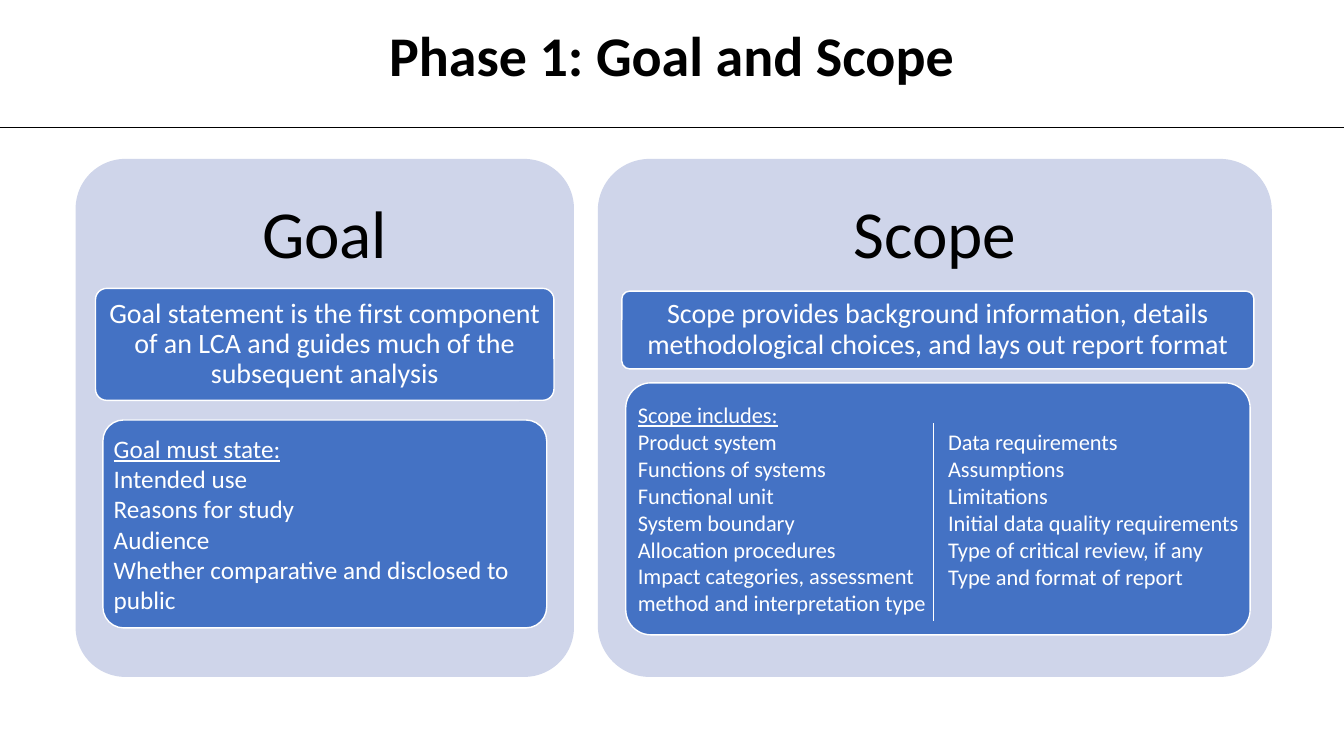
from lxml import etree
from pptx import Presentation
from pptx.dml.color import RGBColor
from pptx.enum import shapes, text
from pptx.oxml import ns
from pptx.util import Pt

BLACK, WHITE, PALE, BLUE = "000000", "FFFFFF", "CFD5EA", "4472C4"
CENTER, LEFT = text.PP_ALIGN.CENTER, text.PP_ALIGN.LEFT
MIDDLE, TOP = text.MSO_ANCHOR.MIDDLE, text.MSO_ANCHOR.TOP


def rgb(value):
    return RGBColor.from_string(value)


class SlideBuilder:
    """Holds the shared style and the slide being filled."""

    font = "Calibri"
    corner = 0.1

    def __init__(self, slide):
        self.slide = slide

    def set_lines(self, shape, lines, size, color, align=LEFT, anchor=MIDDLE,
                  spacing=1.0, insets=(7.2, 3.6, 7.2, 3.6), bold=False, heading=False):
        """Fill a shape with one paragraph per line; heading underlines the first."""
        frame = shape.text_frame
        frame.text = "\n".join(lines)
        frame.word_wrap = True
        frame.auto_size = text.MSO_AUTO_SIZE.NONE
        frame.vertical_anchor = anchor
        (frame.margin_left, frame.margin_top,
         frame.margin_right, frame.margin_bottom) = map(Pt, insets)
        for index, paragraph in enumerate(frame.paragraphs):
            paragraph.alignment = align
            paragraph.line_spacing = spacing
            paragraph.space_before = paragraph.space_after = Pt(0)
            for run in paragraph.runs:
                run.font.name = self.font
                run.font.size = Pt(size)
                run.font.bold = bold
                run.font.underline = heading and index == 0
                run.font.color.rgb = rgb(color)

    def place(self, shape, box):
        shape.left, shape.top, shape.width, shape.height = map(Pt, box)

    def title(self, box, wording):
        heading = self.slide.shapes.title
        self.place(heading, box)
        self.set_lines(heading, [wording], 40, BLACK, CENTER, spacing=0.9, bold=True)

    def body(self, box, lines, size):
        """Place the body placeholder in front, as a list without bullets."""
        column = self.slide.placeholders[1]
        self.place(column, box)
        self.set_lines(column, lines, size, WHITE, anchor=TOP)
        for paragraph in column.text_frame.paragraphs:
            properties = paragraph._p.get_or_add_pPr()
            properties.set("marL", "0")
            properties.set("indent", "0")
            etree.SubElement(properties, ns.qn("a:buNone"))
        column.element.getparent().append(column.element)

    def card(self, box, fill, outline=None):
        card = self.slide.shapes.add_shape(
            shapes.MSO_SHAPE.ROUNDED_RECTANGLE, *map(Pt, box))
        card.adjustments[0] = self.corner
        card.shadow.inherit = False
        card.fill.solid()
        card.fill.fore_color.rgb = rgb(fill)
        if outline:
            card.line.color.rgb = rgb(outline)
            card.line.width = Pt(1)
        else:
            card.line.fill.background()
        return card

    def panel(self, box, heading):
        """Pale card with its heading held in the top band."""
        self.set_lines(self.card(box, PALE), [heading], 48, BLACK, CENTER,
                       spacing=0.9, insets=(14.4, 0, 14.4, 259))

    def statement(self, box, wording):
        self.set_lines(self.card(box, BLUE, WHITE), [wording], 20, WHITE, CENTER,
                       spacing=0.9, insets=(4, 3, 4, 3))

    def checklist(self, box, lines, size):
        self.set_lines(self.card(box, BLUE, WHITE), lines, size, WHITE,
                       insets=(3.4, 2.5, 3.4, 2.5), heading=True)

    def rule(self, x1, y1, x2, y2, color):
        line = self.slide.shapes.add_connector(
            shapes.MSO_CONNECTOR.STRAIGHT, Pt(x1), Pt(y1), Pt(x2), Pt(y2))
        line.line.color.rgb = rgb(color)
        line.line.width = Pt(0.5)
        etree.SubElement(line.element.spPr, ns.qn("a:effectLst"))


def main():
    deck = Presentation()
    deck.slide_width, deck.slide_height = Pt(960), Pt(540)
    page = SlideBuilder(deck.slides.add_slide(deck.slide_layouts[1]))

    page.title((209, 16.5, 541.5, 51), "Phase 1: Goal and Scope")
    page.rule(0, 91, 960, 91, BLACK)

    page.panel((54, 113.5, 356, 370), "Goal")
    page.statement(
        (68.2, 206, 327.5, 80),
        "Goal statement is the first component of an LCA "
        "and guides much of the subsequent analysis")
    page.checklist((73.5, 300, 317, 148.5), [
        "Goal must state:",
        "Intended use",
        "Reasons for study",
        "Audience",
        "Whether comparative and disclosed to public",
    ], 18)

    page.panel((427, 113.5, 481.5, 370), "Scope")
    page.statement(
        (444.2, 208, 451.5, 55.5),
        "Scope provides background information, details "
        "methodological choices, and lays out report format")
    page.checklist((447, 273.5, 446, 180), [
        "Scope includes:",
        "Product system",
        "Functions of systems",
        "Functional unit",
        "System boundary",
        "Allocation procedures",
        "Impact categories, assessment\vmethod and interpretation type",
    ], 16)
    page.body((670, 302.5, 248, 124), [
        "Data requirements",
        "Assumptions",
        "Limitations",
        "Initial data quality requirements",
        "Type of critical review, if any",
        "Type and format of report",
    ], 16)
    page.rule(666.7, 302.5, 666.7, 443.5, WHITE)

    deck.save("out.pptx")


if __name__ == "__main__":
    main()
